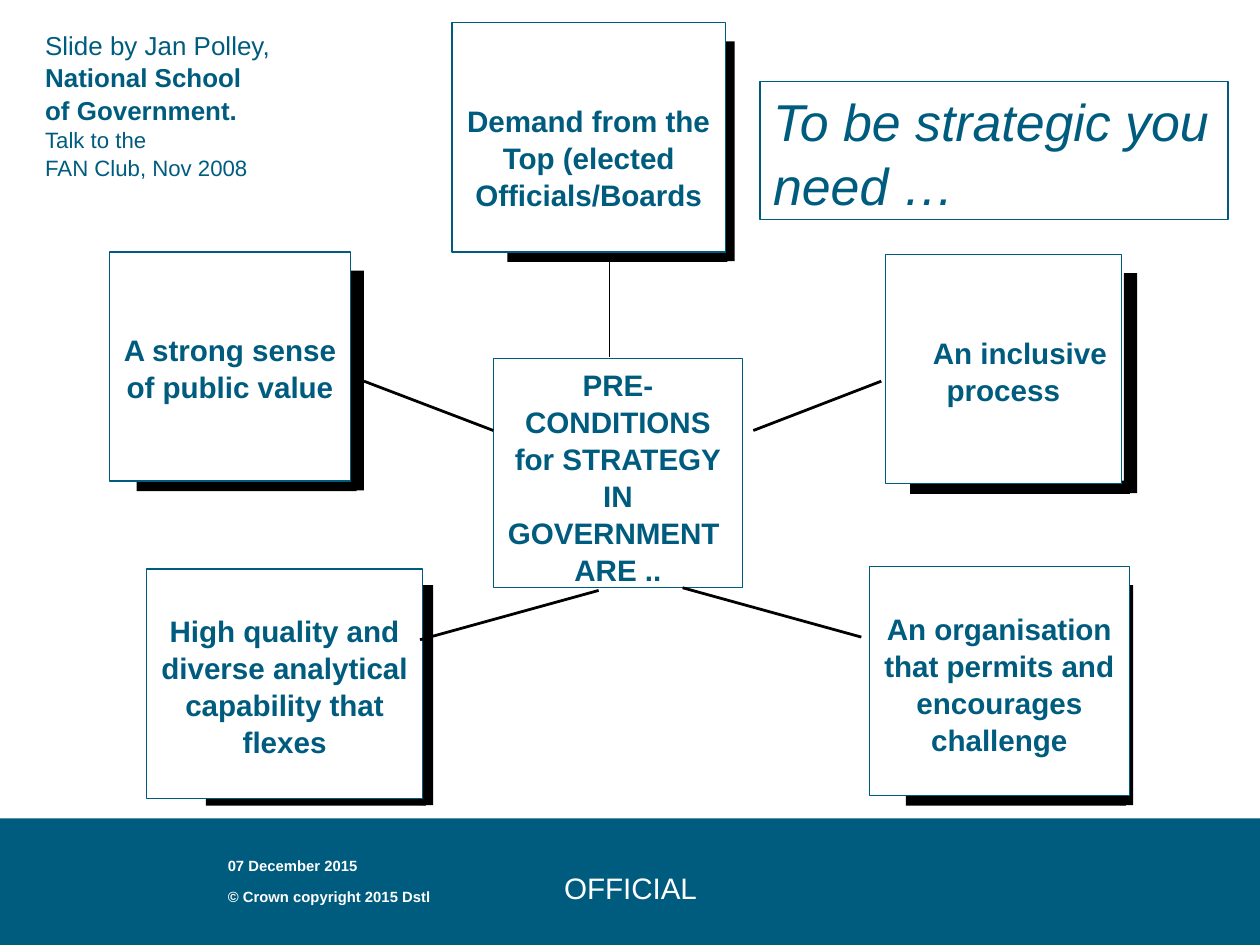
from dataclasses import dataclass

from lxml import etree
from pptx import Presentation
from pptx.dml.color import RGBColor
from pptx.enum.shapes import MSO_CONNECTOR, MSO_SHAPE
from pptx.enum.text import MSO_ANCHOR, PP_ALIGN
from pptx.oxml.ns import qn
from pptx.util import Inches, Pt

RECTANGLE = MSO_SHAPE.RECTANGLE
STRAIGHT = MSO_CONNECTOR.STRAIGHT
TOP, MIDDLE, BOTTOM = MSO_ANCHOR.TOP, MSO_ANCHOR.MIDDLE, MSO_ANCHOR.BOTTOM
LEFT, CENTER = PP_ALIGN.LEFT, PP_ALIGN.CENTER

TEAL, WHITE, BLACK = "005C7E", "FFFFFF", "000000"
CARD_HEIGHT = 1.72
CARD_LINE = 0.27
TOP_INSET = 0.06
BAR_WIDTH, BAR_LENGTH = 0.1, 1.65


@dataclass
class Line:
    text: str
    size: float = 16
    bold: bool = True
    italic: bool = False
    color: str = TEAL
    indent: float = 0


@dataclass
class Card:
    left: float
    top: float
    width: float
    lines: list[Line]
    skipped_lines: int
    bar: tuple[float, float]


@dataclass
class Spoke:
    start: tuple[float, float]
    end: tuple[float, float]
    weight: float = 1.5


CARDS = [
    Card(0.82, 1.89, 1.81, [Line("A strong sense"), Line("of public value")], 2, (2.63, 2.03)),
    Card(1.1, 4.27, 2.07, [Line("High quality and"), Line("diverse analytical"),
                           Line("capability that"), Line("flexes")], 1, (3.15, 4.39)),
    Card(6.64, 1.91, 1.77, [Line("An inclusive", indent=0.25), Line("process")], 2, (8.43, 2.05)),
    Card(3.39, 0.17, 2.05, [Line("Demand from the"), Line("Top (elected"),
                            Line("Officials/Boards")], 2, (5.41, 0.31)),
    Card(6.52, 4.25, 1.95, [Line("An organisation"), Line("that permits and"),
                            Line("encourages"), Line("challenge")], 1, (8.4, 4.39)),
]
SPOKES = [
    Spoke((3.7, 3.23), (2.73, 2.86)),
    Spoke((6.61, 2.86), (5.65, 3.23)),
    Spoke((6.46, 4.78), (5.12, 4.41)),
    Spoke((3.15, 4.8), (4.49, 4.43)),
    Spoke((4.57, 2.68), (4.57, 1.95), 0.75),
]
HUB = [Line(text) for text in ("PRE-", "CONDITIONS", "for STRATEGY", "IN", "GOVERNMENT ", "ARE ..")]
TITLE = [Line(text, 28, False, True) for text in ("To be strategic you", "need …")]
CREDIT = [
    Line("Slide by Jan Polley,", 14, False),
    Line("National School", 14),
    Line("of Government.", 14),
    Line("Talk to the", 12, False),
    Line("FAN Club, Nov 2008", 12, False),
]


def rgb(value: str) -> RGBColor:
    return RGBColor.from_string(value)


def write_lines(shape, lines: list[Line], align=LEFT, anchor=TOP,
                top_inset: float = TOP_INSET, wrap: bool = False) -> None:
    frame = shape.text_frame
    settings = {
        "word_wrap": wrap,
        "vertical_anchor": anchor,
        "margin_left": Inches(0.1),
        "margin_right": Inches(0.1),
        "margin_top": Inches(top_inset),
        "margin_bottom": Inches(0.05),
    }
    for name, value in settings.items():
        setattr(frame, name, value)
    for index, line in enumerate(lines):
        para = frame.paragraphs[0] if index == 0 else frame.add_paragraph()
        para.alignment = align
        if index:
            para.space_before = Pt(line.size * 0.05)
        if line.indent:
            para._p.get_or_add_pPr().set("marL", str(Inches(line.indent)))
        span = para.add_run()
        span.text = line.text
        formats = {"name": "Arial", "size": Pt(line.size), "bold": line.bold, "italic": line.italic}
        for name, value in formats.items():
            setattr(span.font, name, value)
        span.font.color.rgb = rgb(line.color)


def add_rectangle(page, left: float, top: float, width: float, height: float,
                  fill: str | None = None, outline: str | None = None):
    box = page.shapes.add_shape(RECTANGLE, Inches(left), Inches(top), Inches(width), Inches(height))
    box.shadow.inherit = False
    if fill:
        box.fill.solid()
        box.fill.fore_color.rgb = rgb(fill)
    else:
        box.fill.background()
    if outline:
        box.line.color.rgb = rgb(outline)
        box.line.width = Pt(0.75)
    else:
        box.line.fill.background()
    return box


def add_text(page, left: float, top: float, width: float, height: float):
    return page.shapes.add_textbox(Inches(left), Inches(top), Inches(width), Inches(height))


def add_bars(page, card: Card) -> None:
    left, top = card.bar
    add_rectangle(page, left, top, BAR_WIDTH, BAR_LENGTH, BLACK)
    lower = add_rectangle(page, left - 0.83, top + 0.78, BAR_WIDTH, BAR_LENGTH, BLACK)
    lower.rotation = 270


def add_card(page, card: Card) -> None:
    box = add_rectangle(page, card.left, card.top, card.width, CARD_HEIGHT, WHITE, TEAL)
    write_lines(box, card.lines, CENTER, top_inset=TOP_INSET + CARD_LINE * card.skipped_lines)


def add_spoke(page, spoke: Spoke) -> None:
    ends = [Inches(value) for value in (*spoke.start, *spoke.end)]
    line = page.shapes.add_connector(STRAIGHT, *ends)
    line.line.color.rgb = rgb(BLACK)
    line.line.width = Pt(spoke.weight)
    etree.SubElement(line._element.spPr, qn("a:effectLst"))


def add_footer(page) -> None:
    add_rectangle(page, 0, 6.14, 9.45, 0.95, TEAL)
    marking = add_text(page, 3.43, 6.16, 2.6, 0.94)
    write_lines(marking, [Line("OFFICIAL", bold=False, color=WHITE)], CENTER, MIDDLE, 0.05, True)
    marking.text_frame.paragraphs[0].line_spacing = Pt(24)
    for top, text, anchor in ((6.61, "© Crown copyright 2015 Dstl", TOP),
                              (6.3, "07 December 2015", BOTTOM)):
        note = add_text(page, 1.61, top, 1.81, 0.31)
        write_lines(note, [Line(text, 8, color=WHITE)], LEFT, anchor, 0.05, True)


def main() -> None:
    deck = Presentation()
    deck.slide_width, deck.slide_height = Inches(9.45), Inches(7.09)
    page = deck.slides.add_slide(deck.slide_layouts[6])
    add_footer(page)
    write_lines(add_text(page, 0.24, 0.16, 4.72, 1.21), CREDIT, wrap=True)
    write_lines(add_rectangle(page, 5.7, 0.61, 3.51, 1.04, outline=TEAL), TITLE)
    write_lines(add_rectangle(page, 3.7, 2.69, 1.87, CARD_HEIGHT, outline=TEAL), HUB, CENTER)
    for card in CARDS:
        add_bars(page, card)
    for card in CARDS:
        add_card(page, card)
    for spoke in SPOKES:
        add_spoke(page, spoke)
    deck.save("out.pptx")


if __name__ == "__main__":
    main()
